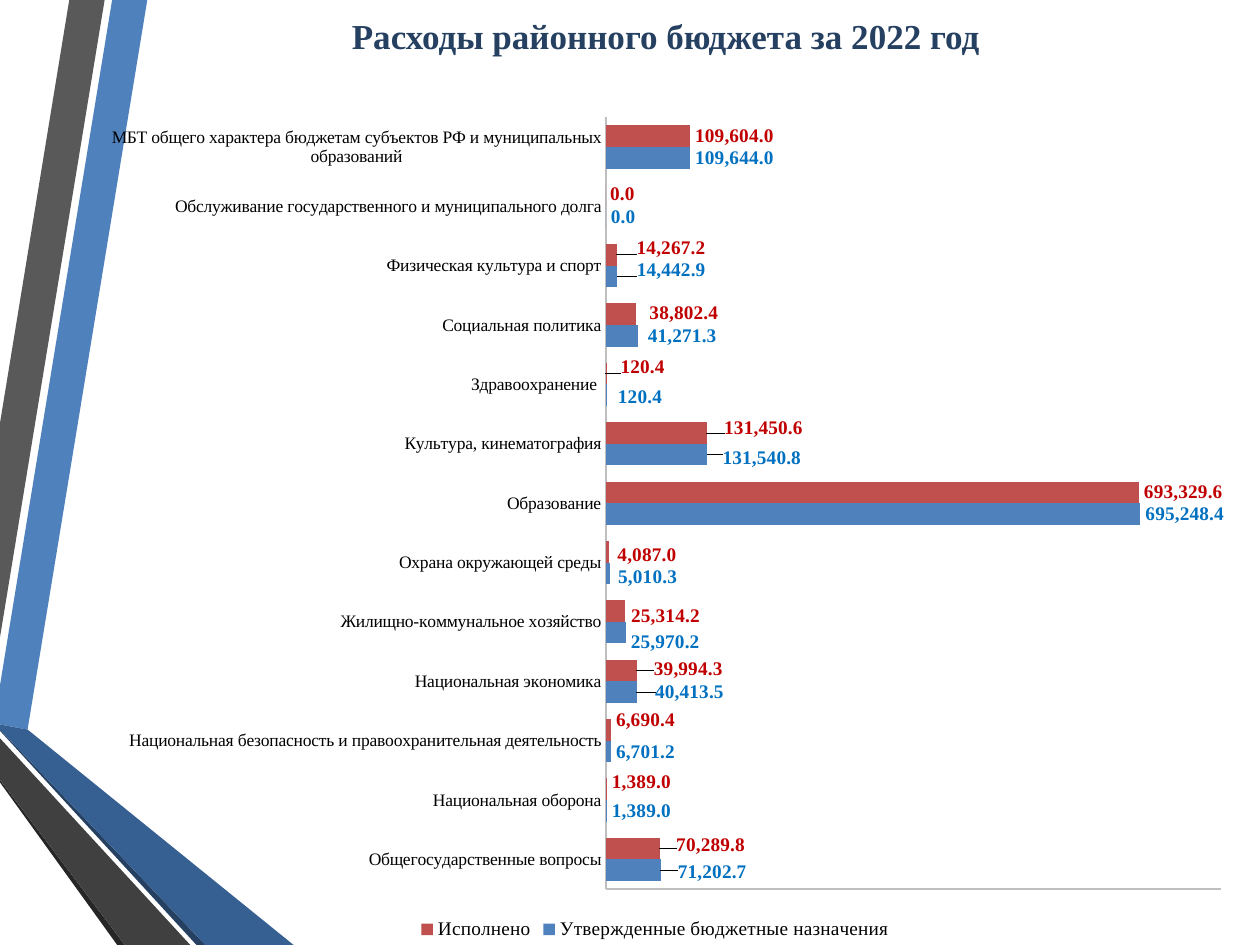
from copy import deepcopy
from dataclasses import dataclass

from lxml.etree import QName
from pptx import Presentation
from pptx.chart.data import CategoryChartData
from pptx.dml.color import RGBColor
from pptx.enum.chart import (XL_CHART_TYPE, XL_LABEL_POSITION, XL_LEGEND_POSITION,
                             XL_TICK_LABEL_POSITION, XL_TICK_MARK)
from pptx.enum.text import MSO_ANCHOR, PP_ALIGN
from pptx.oxml import parse_xml
from pptx.oxml.ns import nsdecls
from pptx.util import Pt


@dataclass(frozen=True)
class Theme:
    serif: str = "Times New Roman"
    title_size: int = 20
    label_size: int = 11
    category_size: int = 10
    navy: str = "254061"
    black: str = "000000"
    axis: str = "BFBFBF"
    blue: str = "4F81BD"
    blue_dark: str = "376092"
    blue_label: str = "0070C0"
    red: str = "C0504D"
    red_label: str = "C00000"
    gray: str = "595959"
    gray_dark: str = "404040"
    gray_deep: str = "262626"


THEME = Theme()

RIBBONS = [
    (THEME.blue, [(0, 391.7), (0, 414), (15.8, 416.9), (84.2, 0), (64.1, 0)]),
    (THEME.gray, [(59.8, 0), (39.6, 0), (0, 241.9), (0, 364.3)]),
    (THEME.gray_deep, [(0, 445.7), (0, 447.1), (67, 540), (71.3, 540)]),
    (THEME.navy, [(0, 416.9), (0, 417.6), (112.3, 540), (117.4, 540)]),
    (THEME.blue_dark, [(0, 416.9), (117.4, 540), (167.8, 540), (15.8, 416.9), (0, 414)]),
    (THEME.gray_dark, [(0, 445.7), (71.3, 540), (108.7, 540), (0, 421.9)]),
]

SPENDING = [
    ("Общегосударственные вопросы", 71202.7, 70289.8),
    ("Национальная оборона", 1389, 1389),
    ("Национальная безопасность и правоохранительная деятельность", 6701.2, 6690.4),
    ("Национальная экономика", 40413.5, 39994.3),
    ("Жилищно-коммунальное хозяйство", 25970.2, 25314.2),
    ("Охрана окружающей среды", 5010.3, 4087),
    ("Образование", 695248.4, 693329.6),
    ("Культура, кинематография", 131540.8, 131450.6),
    ("Здравоохранение ", 120.4, 120.4),
    ("Социальная политика", 41271.3, 38802.4),
    ("Физическая культура и спорт", 14442.9, 14267.2),
    ("Обслуживание государственного и муниципального долга", 0, 0),
    ("МБТ общего характера бюджетам субъектов РФ и муниципальных образований",
     109644, 109604),
]

PLANNED_SHIFTS = {0: (7, 1), 3: (7.5, 0), 4: (0, 5), 5: (2, 2), 7: (6, 2),
                  8: (4, 1), 9: (3, 0), 10: (8.5, -4)}
ACTUAL_SHIFTS = {0: (6.5, -2), 1: (0, -4.5), 2: (0, -5.5), 3: (7, -1), 4: (0.5, 3),
                 5: (2, 2), 7: (7, -3), 8: (5.5, -4), 9: (5, -1), 10: (8.5, -4),
                 11: (-0.5, -1)}
SERIES_STYLES = [
    (THEME.blue, THEME.blue_label, PLANNED_SHIFTS),
    (THEME.red, THEME.red_label, ACTUAL_SHIFTS),
]


def style_font(font, size, color=THEME.black, bold=False):
    font.name = THEME.serif
    font.size = Pt(size)
    font.bold = bold
    font.color.rgb = RGBColor.from_string(color)


def add_ribbons(page, left, top):
    for color, points in RIBBONS:
        corners = [(Pt(left + x), Pt(top + y)) for x, y in points]
        builder = page.shapes.build_freeform(*corners[0])
        builder.add_line_segments(corners[1:], close=True)
        ribbon = builder.convert_to_shape()
        ribbon.shadow.inherit = False
        ribbon.fill.solid()
        ribbon.fill.fore_color.rgb = RGBColor.from_string(color)
        ribbon.line.fill.background()


def add_title(page, left, top, width, height):
    box = page.shapes.add_textbox(Pt(left), Pt(top), Pt(width), Pt(height))
    frame = box.text_frame
    frame.word_wrap = True
    frame.vertical_anchor = MSO_ANCHOR.TOP
    frame.margin_top = Pt(8)
    para = frame.paragraphs[0]
    para.text = "Расходы районного бюджета за 2022 год"
    para.alignment = PP_ALIGN.CENTER
    style_font(para.font, THEME.title_size, THEME.navy, True)


def manual_layout(x, y, extra=""):
    return parse_xml(f'<c:layout {nsdecls("c")}><c:manualLayout>{extra}'
                     f'<c:x val="{x:.4f}"/><c:y val="{y:.4f}"/>'
                     '</c:manualLayout></c:layout>')


def place_plot(chart, x, y, width, height):
    area = chart._chartSpace.chart.plotArea
    for old in area.findall(QName(area.nsmap["c"], "layout")):
        area.remove(old)
    layout = manual_layout(x, y, '<c:layoutTarget val="inner"/>'
                                 '<c:xMode val="edge"/><c:yMode val="edge"/>')
    for name, value in (("w", width), ("h", height)):
        layout[0].append(parse_xml(f'<c:{name} {nsdecls("c")} val="{value}"/>'))
    area.insert(0, layout)


def shift_labels(labels, shifts, width, height):
    group = labels._element
    shared = [item for item in group if QName(item).localname != "showLeaderLines"]
    for place, (index, (right, down)) in enumerate(shifts.items()):
        label = parse_xml(f'<c:dLbl {nsdecls("c")}><c:idx val="{index}"/></c:dLbl>')
        label.append(manual_layout(right / width, down / height))
        label.extend(deepcopy(item) for item in shared)
        group.insert(place, label)


def style_axis(axis):
    axis.has_major_gridlines = False
    axis.major_tick_mark = XL_TICK_MARK.NONE
    axis.minor_tick_mark = XL_TICK_MARK.NONE
    axis.format.line.color.rgb = RGBColor.from_string(THEME.axis)
    axis.format.line.width = Pt(0.75)


def add_spending_chart(page, left, top, width, height):
    names, planned, actual = zip(*SPENDING)
    data = CategoryChartData(number_format="#,##0.0")
    data.categories = names
    data.add_series("Утвержденные бюджетные назначения", planned)
    data.add_series("Исполнено", actual)
    chart = page.shapes.add_chart(XL_CHART_TYPE.BAR_CLUSTERED, Pt(left), Pt(top),
                                  Pt(width), Pt(height), data).chart
    chart.has_title = False
    style_font(chart.font, THEME.label_size)
    place_plot(chart, 0.458, 0.034, 0.525, 0.901)

    chart.has_legend = True
    chart.legend.position = XL_LEGEND_POSITION.BOTTOM
    chart.legend.include_in_layout = False
    style_font(chart.legend.font, THEME.label_size)

    style_axis(chart.category_axis)
    style_font(chart.category_axis.tick_labels.font, THEME.category_size)
    style_axis(chart.value_axis)
    chart.value_axis.minimum_scale = 0
    chart.value_axis.maximum_scale = 800000
    chart.value_axis.tick_label_position = XL_TICK_LABEL_POSITION.NONE

    plot = chart.plots[0]
    plot.gap_width = 75
    plot.vary_by_categories = False
    for series, (color, label_color, shifts) in zip(plot.series, SERIES_STYLES):
        series.format.fill.solid()
        series.format.fill.fore_color.rgb = RGBColor.from_string(color)
        labels = series.data_labels
        labels.show_value = True
        labels.number_format = "#,##0.0"
        labels.number_format_is_linked = False
        labels.position = XL_LABEL_POSITION.OUTSIDE_END
        style_font(labels.font, THEME.label_size, label_color, True)
        shift_labels(labels, shifts, width, height)


def main():
    deck = Presentation()
    deck.slide_width, deck.slide_height = Pt(720), Pt(540)
    page = deck.slides.add_slide(deck.slide_layouts[6])
    add_ribbons(page, 0, 0)
    add_title(page, 77, 0, 607, 62)
    add_spending_chart(page, 39.6, 50.4, 669.6, 489.6)
    deck.save("out.pptx")


if __name__ == "__main__":
    main()
